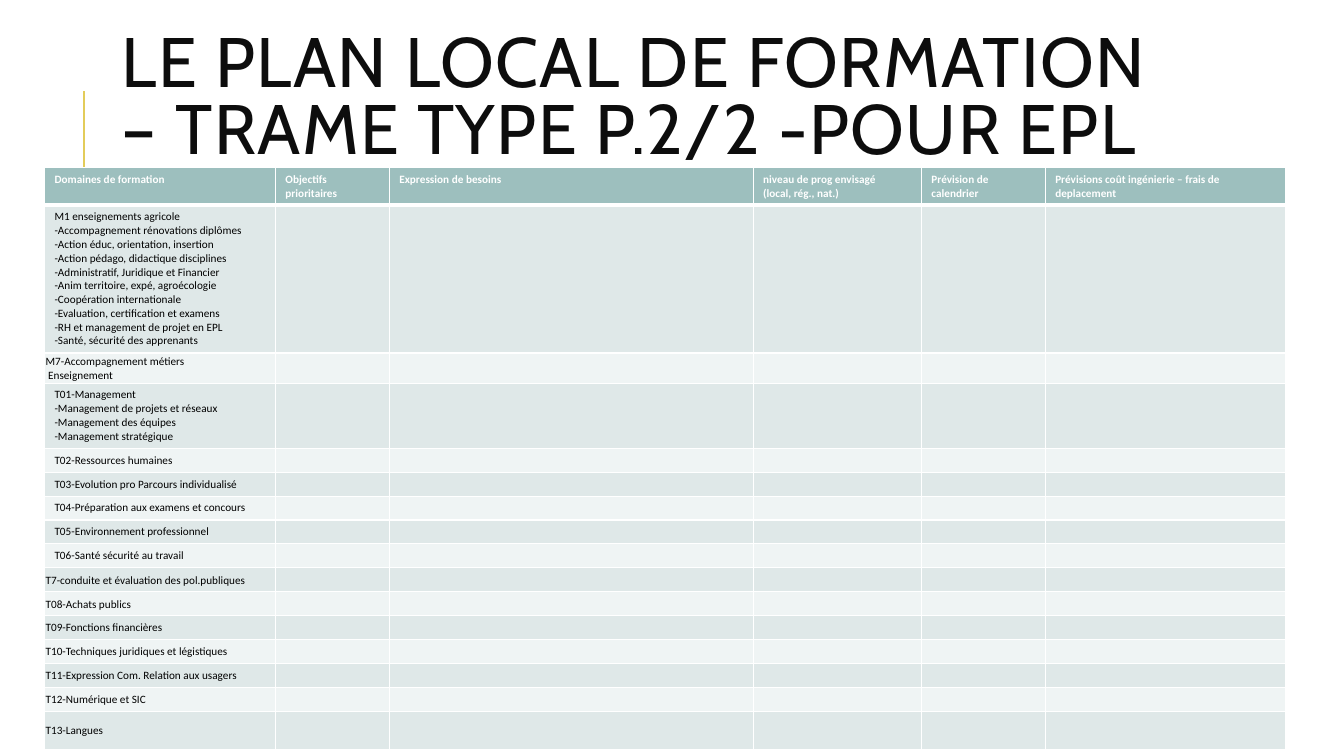
from lxml.etree import SubElement
from pptx import Presentation
from pptx.dml.color import RGBColor
from pptx.enum.shapes import MSO_CONNECTOR
from pptx.enum.text import MSO_ANCHOR, MSO_AUTO_SIZE, PP_ALIGN
from pptx.oxml.ns import qn
from pptx.util import Cm, Pt

INK = RGBColor(0x0D, 0x0D, 0x0D)
BLACK = RGBColor(0x00, 0x00, 0x00)
WHITE = RGBColor(0xFF, 0xFF, 0xFF)
GOLD = RGBColor(0xE3, 0xCC, 0x5A)
HEADER_FILL = RGBColor(0x9D, 0xBF, 0xBE)
BANDS = [RGBColor(0xEF, 0xF4, 0xF4), RGBColor(0xDF, 0xE8, 0xE8)]

COLUMN_WIDTHS = [5.82, 2.87, 9.17, 4.24, 3.12, 6.05]
HEADERS = [
    "Domaines de formation",
    "Objectifs prioritaires",
    "Expression de besoins",
    "niveau de prog envisagé\n(local, rég., nat.)",
    "Prévision de calendrier",
    "Prévisions coût ingénierie – frais de deplacement",
]
M1 = """M1 enseignements agricole
-Accompagnement rénovations diplômes
-Action éduc, orientation, insertion
-Action pédago, didactique disciplines
-Administratif, Juridique et Financier
-Anim territoire, expé, agroécologie
-Coopération internationale
-Evaluation, certification et examens
-RH et management de projet en EPL
-Santé, sécurité des apprenants"""
T01 = """T01-Management
-Management de projets et réseaux
-Management des équipes
-Management stratégique"""
ROW_HEIGHT = 0.59
DOMAINS = [
    (M1, 3.53, False),
    ("M7-Accompagnement métiers\n Enseignement", 0.76, True),
    (T01, 1.55, False),
    ("T02-Ressources humaines", ROW_HEIGHT, False),
    ("T03-Evolution pro Parcours individualisé", ROW_HEIGHT, False),
    ("T04-Préparation aux examens et concours", ROW_HEIGHT, False),
    ("T05-Environnement professionnel", ROW_HEIGHT, False),
    ("T06-Santé sécurité au travail", ROW_HEIGHT, False),
    ("T7-conduite et évaluation des pol.publiques", ROW_HEIGHT, True),
    ("T08-Achats publics", ROW_HEIGHT, True),
    ("T09-Fonctions financières", ROW_HEIGHT, True),
    ("T10-Techniques juridiques et légistiques", ROW_HEIGHT, True),
    ("T11-Expression Com. Relation aux usagers", ROW_HEIGHT, True),
    ("T12-Numérique et SIC", ROW_HEIGHT, True),
    ("T13-Langues", 0.97, True),
]
TIGHT = {
    "margin_left": Cm(0.03),
    "margin_top": Cm(0.03),
    "margin_right": Cm(0.03),
    "margin_bottom": Cm(0),
    "vertical_anchor": MSO_ANCHOR.MIDDLE,
}


def apply(target, values):
    for name, value in values.items():
        setattr(target, name, value)


def format_font(font, color, **values):
    apply(font, values)
    font.color.rgb = color


def add_title(page, text):
    title = page.shapes.title
    apply(title, {"left": Cm(2.82), "top": Cm(0.46), "width": Cm(27), "height": Cm(4.17)})
    frame = title.text_frame
    frame.text = text
    apply(frame, {"word_wrap": True, "auto_size": MSO_AUTO_SIZE.NONE,
                  "vertical_anchor": MSO_ANCHOR.MIDDLE})
    para = frame.paragraphs[0]
    apply(para, {"alignment": PP_ALIGN.LEFT, "line_spacing": 0.8})
    span = para.runs[0]
    format_font(span.font, INK, name="Cabin", size=Pt(50))
    span.font._element.set("spc", "100")


def add_accent_line(page):
    line = page.shapes.add_connector(
        MSO_CONNECTOR.STRAIGHT, Cm(2.11), Cm(4.83), Cm(2.11), Cm(2.29))
    line.line.color.rgb = GOLD
    line.line.width = Pt(1.5)
    SubElement(line._element.spPr, qn("a:effectLst"))


def set_borders(cell, top, bottom):
    properties = cell._tc.get_or_add_tcPr()
    for side, width in {"L": 1, "R": 1, "T": top, "B": bottom}.items():
        border = SubElement(properties, qn(f"a:ln{side}"), w=str(Pt(width)))
        fill = SubElement(border, qn("a:solidFill"))
        SubElement(fill, qn("a:srgbClr"), val=str(WHITE))


def fill_cell(cell, text, fill, color, bold, top=1, bottom=1):
    set_borders(cell, top, bottom)
    cell.fill.solid()
    cell.fill.fore_color.rgb = fill
    cell.text = text
    for para in cell.text_frame.paragraphs:
        for span in para.runs:
            format_font(span.font, color, name="Calibri", size=Pt(8), bold=bold)
        if not para.runs:
            SubElement(para._p, qn("a:endParaRPr"), sz="800")


def add_plan_table(page):
    heights = [0.91] + [height for _, height, _ in DOMAINS]
    table = page.shapes.add_table(
        len(heights), len(HEADERS), Cm(1.12), Cm(4.22),
        Cm(sum(COLUMN_WIDTHS)), Cm(sum(heights))).table
    table.horz_banding = False
    for column, width in zip(table.columns, COLUMN_WIDTHS):
        column.width = Cm(width)
    for row, height in zip(table.rows, heights):
        row.height = Cm(height)
    for index, header in enumerate(HEADERS):
        fill_cell(table.cell(0, index), header, HEADER_FILL, WHITE, True, bottom=3)
    for row, (domain, _, tight) in enumerate(DOMAINS, start=1):
        for index in range(len(HEADERS)):
            fill_cell(table.cell(row, index), "" if index else domain,
                      BANDS[row % 2], BLACK, False, top=3 if row == 1 else 1)
        if tight:
            apply(table.cell(row, 0), TIGHT)


def main():
    deck = Presentation()
    apply(deck, {"slide_width": Cm(33.87), "slide_height": Cm(19.05)})
    page = deck.slides.add_slide(deck.slide_layouts[5])
    add_accent_line(page)
    add_title(page, "LE PLAN LOCAL DE FORMATION – TRAME TYPE P.2/2 -POUR EPL")
    add_plan_table(page)
    deck.save("out.pptx")


if __name__ == "__main__":
    main()
